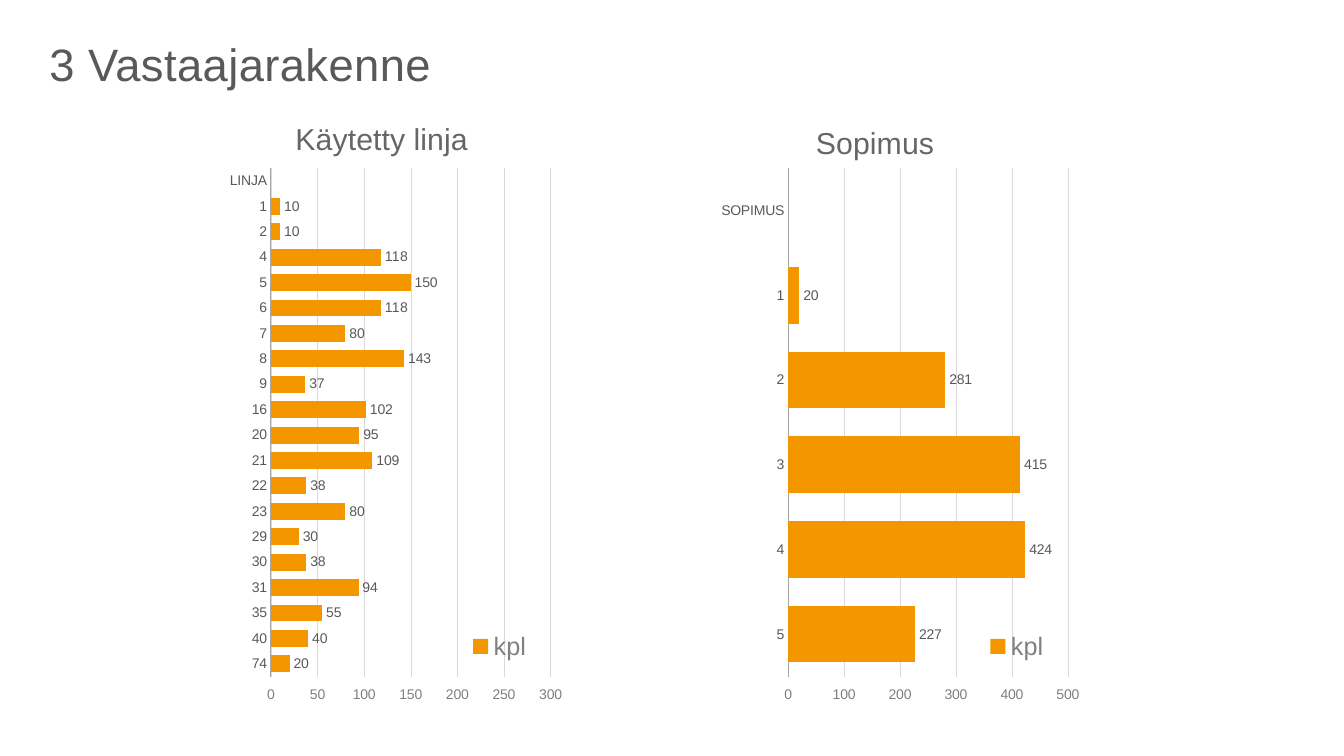
from lxml import etree
from pptx import Presentation
from pptx import util as u
from pptx.chart.data import CategoryChartData
from pptx.dml.color import RGBColor
from pptx.enum import chart as ch, text
from pptx.oxml.ns import qn

PX = 9144  # EMU per px, 100 px to the inch
FONT = "Arial"
ORANGE, DARK, GREY = "F49600", "595959", "808080"

LINES = {"LINJA": None, "1": 10, "2": 10, "4": 118, "5": 150, "6": 118,
         "7": 80, "8": 143, "9": 37, "16": 102, "20": 95, "21": 109,
         "22": 38, "23": 80, "29": 30, "30": 38, "31": 94, "35": 55,
         "40": 40, "74": 20}
CONTRACTS = {"SOPIMUS": None, "1": 20, "2": 281, "3": 415, "4": 424, "5": 227}


def px(n):
    return u.Emu(n * PX)


def rgb(hex_color):
    return RGBColor.from_string(hex_color)


def set_font(font, size, color):
    font.name, font.size, font.bold = FONT, u.Pt(size), False
    font.color.rgb = rgb(color)


def write(tf, words, size=18, color=DARK, line_spacing=None, spacing=None):
    p = tf.paragraphs[0]
    p.line_spacing = line_spacing
    r = p.add_run()
    r.text = words
    set_font(r.font, size, color)
    if spacing:
        r.font._element.set("spc", str(spacing))


def set_line(line, color, width):
    line.color.rgb = rgb(color)
    line.width = u.Pt(width)


def place(element, before, inner=False, **fractions):
    """Give a chart part a manual layout in fractions of the chart."""
    for old in element.findall(qn("c:layout")):
        element.remove(old)
    layout = etree.Element(qn("c:layout"))
    manual = etree.SubElement(layout, qn("c:manualLayout"))
    settings = [("layoutTarget", "inner")] if inner else []
    settings += [(f"{key}Mode", "edge") for key in "xy"]
    settings += fractions.items()
    for tag, value in settings:
        etree.SubElement(manual, qn(f"c:{tag}")).set("val", str(value))
    # The layout must stand ahead of this sibling
    element.find(qn(before)).addprevious(layout)


def format_axes(chart, maximum, step):
    cat, val = chart.category_axis, chart.value_axis
    for axis, color in ((cat, DARK), (val, GREY)):
        axis.major_tick_mark = axis.minor_tick_mark = ch.XL_TICK_MARK.NONE
        set_font(axis.tick_labels.font, 10, color)
    # Categories run downwards, so the high end is the bottom edge
    cat.reverse_order = True
    val.tick_label_position = ch.XL_TICK_LABEL_POSITION.HIGH
    set_line(cat.format.line, "A6A6A6", 0.75)
    val.minimum_scale, val.maximum_scale, val.major_unit = 0, maximum, step
    val.format.line.fill.background()
    val.has_major_gridlines = True
    set_line(val.major_gridlines.format.line, "D9D9D9", 0.25)


def add_bar_chart(s, left, title, counts, maximum, step, title_x, title_y):
    data = CategoryChartData(number_format="General")
    data.categories = list(counts)
    data.add_series("kpl", list(counts.values()))
    chart = s.shapes.add_chart(ch.XL_CHART_TYPE.BAR_CLUSTERED, px(left), px(108),
                               px(460), px(613), data).chart
    set_font(chart.font, 18, "000000")
    format_axes(chart, maximum, step)

    # Bars and value labels
    plot = chart.plots[0]
    plot.gap_width, plot.vary_by_categories = 50, False
    fill = plot.series[0].format.fill
    fill.solid()
    fill.fore_color.rgb = rgb(ORANGE)
    plot.has_data_labels = True
    labels = plot.data_labels
    labels.show_value = True
    labels.number_format, labels.number_format_is_linked = "0", False
    labels.position = ch.XL_LABEL_POSITION.OUTSIDE_END
    set_font(labels.font, 10, DARK)

    # Title and legend
    write(chart.chart_title.text_frame, title, 21.6, "666666")
    chart.has_legend = True
    chart.legend.position = ch.XL_LEGEND_POSITION.RIGHT
    chart.legend.include_in_layout = False
    set_font(chart.legend.font, 18, GREY)

    # Placement inside the chart
    place(chart.chart_title._element, "c:overlay", x=title_x, y=title_y)
    place(chart.legend._element, "c:overlay", x=0.787, y=0.84, w=0.15, h=0.06)
    place(chart._chartSpace.chart.plotArea, "c:barChart", inner=True,
          x=0.369, y=0.096, w=0.603, h=0.823)


def add_title(s, words):
    sp = s.shapes.title
    sp.left, sp.top, sp.width, sp.height = px(39), px(26), px(1073), px(54)
    tf = sp.text_frame
    tf.word_wrap, tf.auto_size = True, text.MSO_AUTO_SIZE.NONE
    tf.vertical_anchor = text.MSO_ANCHOR.TOP
    tf.margin_left = tf.margin_right = px(10)
    tf.margin_top, tf.margin_bottom = px(4), 0
    tf.paragraphs[0].alignment = text.PP_ALIGN.LEFT
    write(tf, words, 32.4, line_spacing=1.1, spacing=30)


def main():
    prs = Presentation()
    prs.slide_width, prs.slide_height = px(1333), px(750)
    s = prs.slides.add_slide(prs.slide_layouts[5])
    add_title(s, "3 Vastaajarakenne")
    add_bar_chart(s, 99, "Käytetty linja", LINES, 300, 50, 0.41, 0.009)
    add_bar_chart(s, 612, "Sopimus", CONTRACTS, 500, 100, 0.417, 0.015)
    prs.save("out.pptx")


if __name__ == "__main__":
    main()
